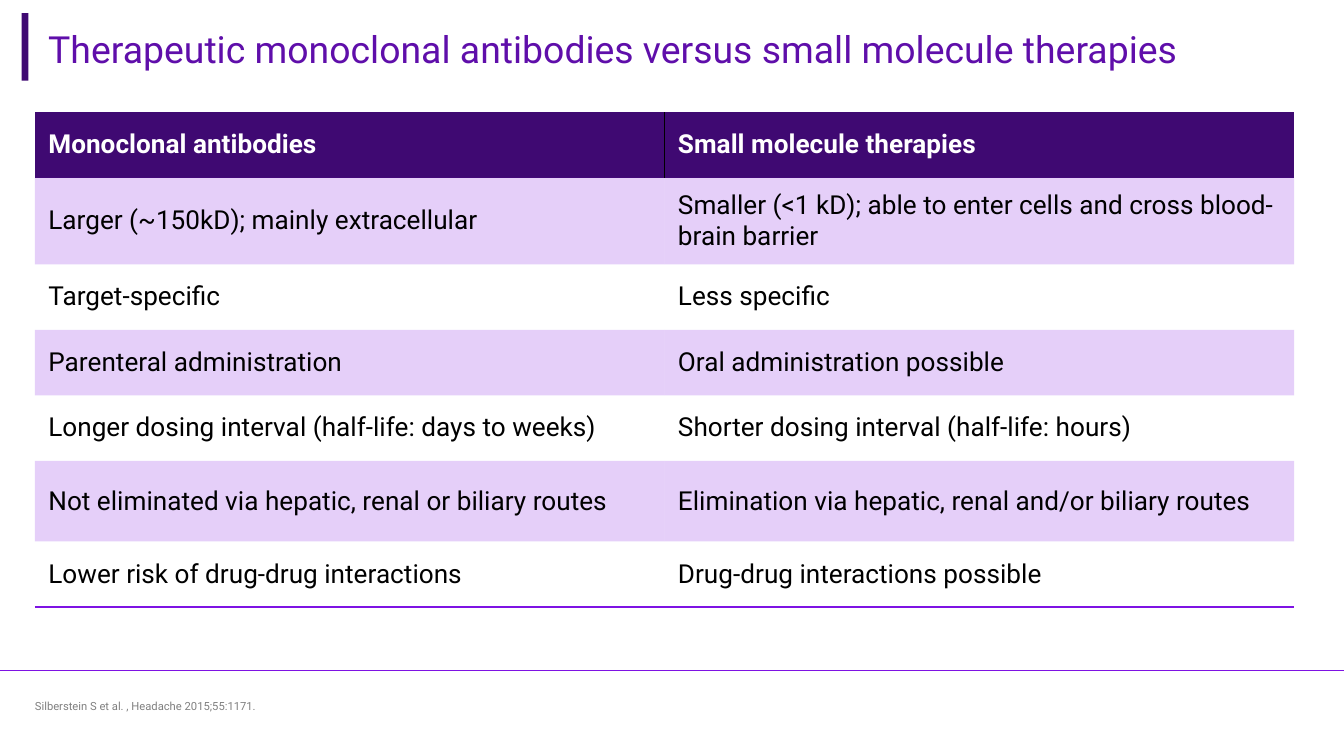
"""Build a slide comparing monoclonal antibodies with small molecule therapies."""
from dataclasses import dataclass

import pptx
import pptx.dml.color
import pptx.enum.shapes
import pptx.enum.text
import pptx.oxml
import pptx.oxml.ns
import pptx.util

Pt = pptx.util.Pt
MIDDLE = pptx.enum.text.MSO_ANCHOR.MIDDLE
FONT = "Roboto"
NO_STYLE = "{2D5ABB26-0587-4C30-8999-92F81FD0307C}"
COLOURS = {
    "header": "3F0972",
    "title": "5F0EAA",
    "accent": "7E13E3",
    "white": "FFFFFF",
    "black": "000000",
    "grey": "808080",
}
BAND_OPACITY = 20
ROWS = [
    ("Monoclonal antibodies", "Small molecule therapies"),
    ("Larger (~150kD); mainly extracellular",
     "Smaller (<1 kD); able to enter cells and cross blood-brain barrier"),
    ("Target-specific", "Less specific"),
    ("Parenteral administration", "Oral administration possible"),
    ("Longer dosing interval (half-life: days to weeks)",
     "Shorter dosing interval (half-life: hours)"),
    ("Not eliminated via hepatic, renal or biliary routes",
     "Elimination via hepatic, renal and/or biliary routes"),
    ("Lower risk of drug-drug interactions", "Drug-drug interactions possible"),
]
ROW_HEIGHT = 35.1
TALL_ROWS = {1: 46.5, 5: 43.2}


@dataclass
class TextBox:
    """A single line of text with its place and look."""
    text: str
    left: float
    top: float
    width: float
    height: float
    size: float
    colour: str
    inset: float
    line_spacing: float = 1.0


def rgb(name: str) -> pptx.dml.color.RGBColor:
    """Return the named colour."""
    return pptx.dml.color.RGBColor.from_string(COLOURS[name])


def write(frame, text: str, size: float, colour: str, bold: bool = False):
    """Write one formatted paragraph and return it."""
    para = frame.paragraphs[0]
    span = para.add_run()
    span.text = text
    for key, value in {"name": FONT, "size": Pt(size), "bold": bold}.items():
        setattr(span.font, key, value)
    span.font.color.rgb = rgb(colour)
    return para


def add_text(page, item: TextBox) -> None:
    """Place a text box on the page."""
    box = page.shapes.add_textbox(Pt(item.left), Pt(item.top), Pt(item.width), Pt(item.height))
    frame = box.text_frame
    layout = {"word_wrap": True, "vertical_anchor": MIDDLE, "margin_left": Pt(item.inset),
              "margin_top": 0, "margin_bottom": 0}
    for key, value in layout.items():
        setattr(frame, key, value)
    write(frame, item.text, item.size, item.colour).line_spacing = item.line_spacing


def add_border(cell, side: str, colour: str) -> None:
    """Draw a one-point border on one side of a cell."""
    border = pptx.oxml.parse_xml(
        f'<a:ln{side} {pptx.oxml.ns.nsdecls("a")} w="{Pt(1)}"><a:solidFill>'
        f'<a:srgbClr val="{COLOURS[colour]}"/></a:solidFill></a:ln{side}>')
    cell._tc.get_or_add_tcPr().insert(0, border)


def fill_cell(cell, colour: str, opacity: int = 100) -> None:
    """Fill a cell with a colour at the given opacity in percent."""
    cell.fill.solid()
    cell.fill.fore_color.rgb = rgb(colour)
    if opacity < 100:
        shade = cell._tc.tcPr.find(".//" + pptx.oxml.ns.qn("a:solidFill") + "/*")
        if shade is not None:
            alpha = pptx.oxml.parse_xml(
                f'<a:alpha {pptx.oxml.ns.nsdecls("a")} val="{opacity * 1000}"/>')
            shade.append(alpha)


def add_comparison(page) -> None:
    """Draw the two-column comparison table."""
    heights = [TALL_ROWS.get(index, ROW_HEIGHT) for index in range(len(ROWS))]
    frame = page.shapes.add_table(len(ROWS), 2, Pt(18.7), Pt(60), Pt(674.6), Pt(sum(heights)))
    table = frame.table
    table._tbl.tblPr.find(pptx.oxml.ns.qn("a:tableStyleId")).text = NO_STYLE
    table.first_row = table.horz_banding = False
    for column in table.columns:
        column.width = Pt(337.3)
    for index, texts in enumerate(ROWS):
        table.rows[index].height = Pt(heights[index])
        header = index == 0
        for column, text in enumerate(texts):
            cell = table.cell(index, column)
            cell.vertical_anchor = MIDDLE
            write(cell.text_frame, text, 14, "white" if header else "black", header)
            if header:
                fill_cell(cell, "header")
                add_border(cell, "RL"[column], "black")
            elif index % 2:
                fill_cell(cell, "accent", BAND_OPACITY)
            else:
                cell.fill.background()
            if index == len(ROWS) - 1:
                add_border(cell, "B", "accent")


def add_frame(page) -> None:
    """Draw the footer rule and the bar beside the title."""
    rule = page.shapes.add_connector(
        pptx.enum.shapes.MSO_CONNECTOR.STRAIGHT, 0, Pt(359.3), Pt(720), Pt(359.3))
    rule.line.width = Pt(0.5)
    rule.line.color.rgb = rgb("accent")
    rule._element.spPr.append(
        pptx.oxml.parse_xml(f'<a:effectLst {pptx.oxml.ns.nsdecls("a")}/>'))
    bar = page.shapes.add_shape(
        pptx.enum.shapes.MSO_SHAPE.RECTANGLE, Pt(11.6), Pt(7), Pt(3.6), Pt(36.2))
    bar.shadow.inherit = False
    bar.fill.solid()
    bar.fill.fore_color.rgb = rgb("header")
    bar.line.fill.background()


def main() -> None:
    """Build and save the deck."""
    deck = pptx.Presentation()
    deck.slide_width, deck.slide_height = Pt(720), Pt(405)
    page = deck.slides.add_slide(deck.slide_layouts[6])
    add_frame(page)
    add_text(page, TextBox("Therapeutic monoclonal antibodies versus small molecule therapies",
                           18.7, 10.4, 683.3, 31, 20, "title", 7.2))
    add_text(page, TextBox("Silberstein S et al. , Headache 2015;55:1171.",
                           18.7, 368.6, 509.8, 20.8, 6, "grey", 0, 0.7))
    add_comparison(page)
    deck.save("out.pptx")


if __name__ == "__main__":
    main()
